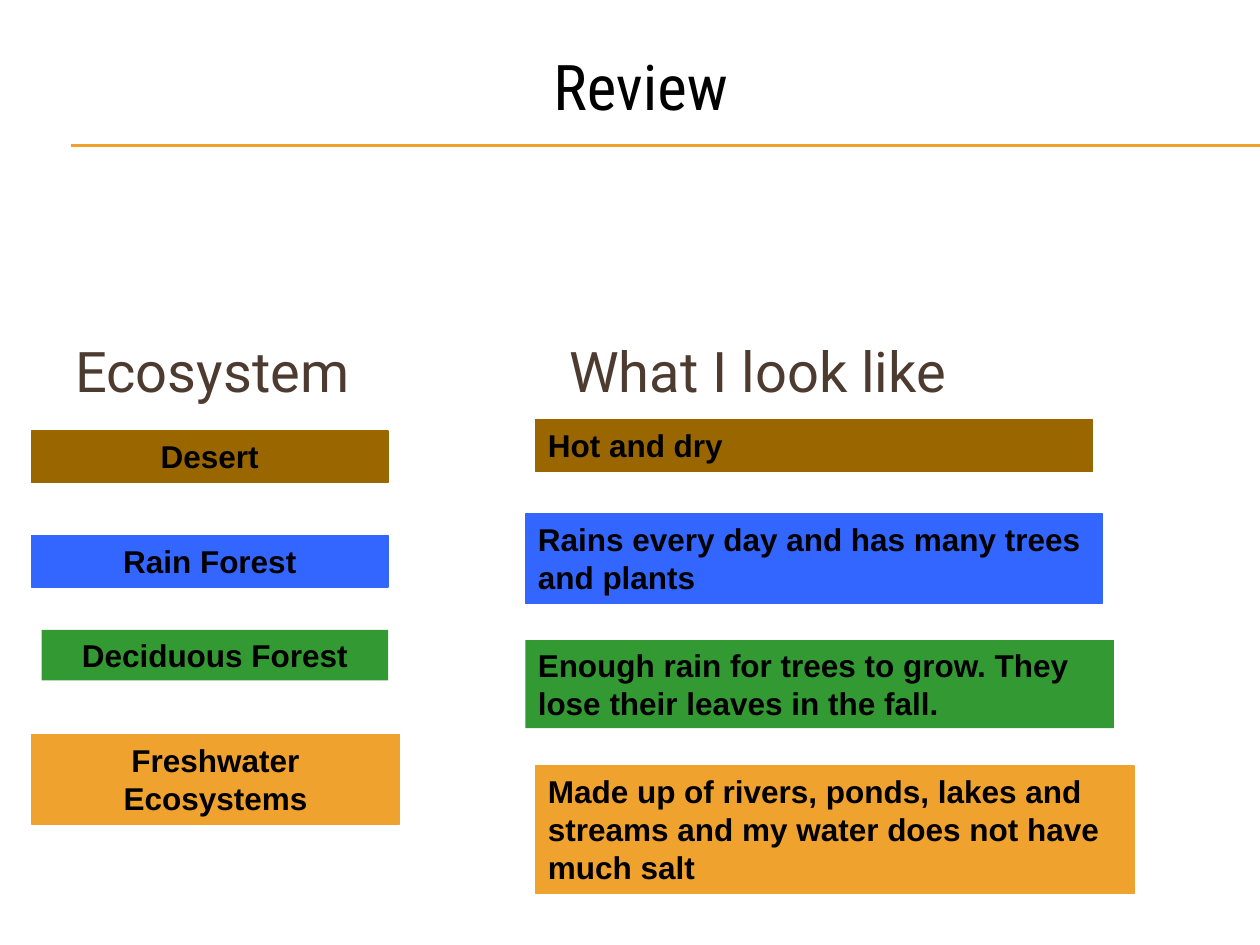
from lxml import etree
from pptx import Presentation
from pptx.dml.color import RGBColor
from pptx.enum.shapes import MSO_CONNECTOR, MSO_SHAPE
from pptx.enum.text import MSO_ANCHOR, PP_ALIGN
from pptx.oxml.ns import qn
from pptx.util import Inches, Pt

CENTER, LEFT = PP_ALIGN.CENTER, PP_ALIGN.LEFT
TOP = MSO_ANCHOR.TOP
RECTANGLE = MSO_SHAPE.RECTANGLE
STRAIGHT = MSO_CONNECTOR.STRAIGHT

BROWN, BLUE, GREEN, ORANGE = "996600", "3366FF", "339933", "F0A22E"


def color(value):
    return RGBColor.from_string(value)


def write(shape, text, font, size, text_color, alignment, bold=False):
    text_frame = shape.text_frame
    text_frame.word_wrap = True
    text_frame.vertical_anchor = TOP
    text_frame.text = text
    paragraph = text_frame.paragraphs[0]
    paragraph.alignment = alignment
    run_font = paragraph.runs[0].font
    run_font.name = font
    run_font.size = Pt(size)
    run_font.bold = bold
    run_font.color.rgb = color(text_color)


presentation = Presentation()
presentation.slide_width = Inches(10)
presentation.slide_height = Inches(7.5)
slide = presentation.slides.add_slide(presentation.slide_layouts[6])

# Double rule under the title
for y in (1.15, 1.16):
    rule = slide.shapes.add_connector(
        STRAIGHT, Inches(0.56), Inches(y), Inches(10), Inches(y))
    rule.line.color.rgb = color(ORANGE)
    rule.line.width = Pt(0.75)
    etree.SubElement(rule._element.spPr, qn("a:effectLst"))

# Title and column headings
headings = [
    ("Review", 1.75, 0.33, 6.67, 0.75, "Roboto Condensed", 36, "000000", CENTER),
    ("Ecosystem", 0.5, 2.62, 3, 0.65, "Roboto", 32, "4E3B30", LEFT),
    ("What I look like", 4.42, 2.62, 4.5, 0.65, "Roboto", 32, "4E3B30", LEFT),
]
for text, left, top, width, height, font, size, text_color, alignment in headings:
    heading = slide.shapes.add_textbox(
        Inches(left), Inches(top), Inches(width), Inches(height))
    write(heading, text, font, size, text_color, alignment)

# Ecosystem names on the left, descriptions on the right
boxes = [
    ("Desert", 0.25, 3.42, 2.83, 0.41, BROWN, CENTER),
    ("Rain Forest", 0.25, 4.25, 2.83, 0.41, BLUE, CENTER),
    ("Deciduous Forest", 0.33, 5, 2.75, 0.4, GREEN, CENTER),
    ("Freshwater Ecosystems", 0.25, 5.83, 2.92, 0.71, ORANGE, CENTER),
    ("Hot and dry", 4.25, 3.33, 4.42, 0.41, BROWN, LEFT),
    ("Rains every day and has many trees and plants",
     4.17, 4.08, 4.58, 0.71, BLUE, LEFT),
    ("Enough rain for trees to grow. They lose their leaves in the fall.",
     4.17, 5.08, 4.67, 0.7, GREEN, LEFT),
    ("Made up of rivers, ponds, lakes and streams and my water does not have "
     "much salt", 4.25, 6.08, 4.75, 1.01, ORANGE, LEFT),
]
for text, left, top, width, height, fill, alignment in boxes:
    box = slide.shapes.add_shape(
        RECTANGLE, Inches(left), Inches(top), Inches(width), Inches(height))
    box.shadow.inherit = False
    box.fill.solid()
    box.fill.fore_color.rgb = color(fill)
    if fill == GREEN:
        box.line.fill.background()
    else:
        box.line.color.rgb = color(fill)
        box.line.width = Pt(0.75)
    write(box, text, "Arial", 18, "000000", alignment, bold=True)

presentation.save("out.pptx")
